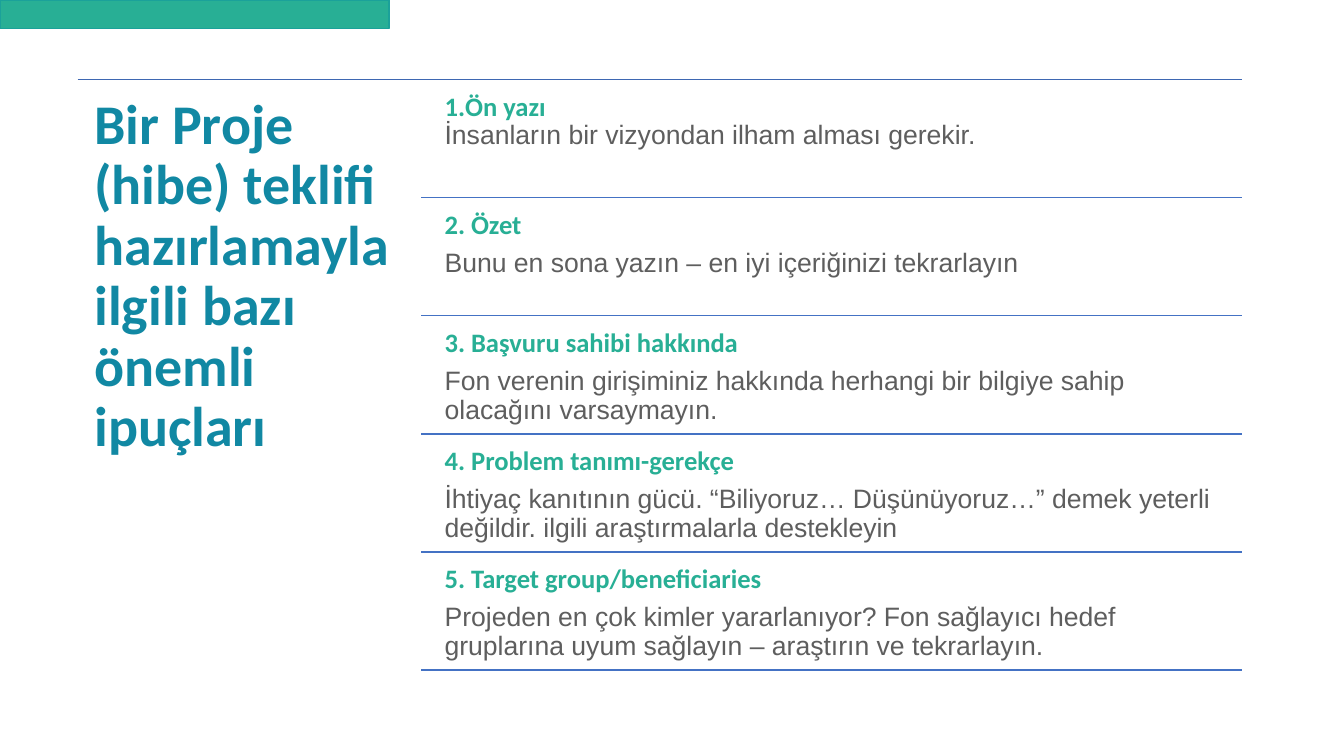
from dataclasses import dataclass

from lxml import etree
from pptx import Presentation
from pptx.dml.color import RGBColor
from pptx.enum.shapes import MSO_CONNECTOR, MSO_SHAPE
from pptx.enum.text import MSO_ANCHOR, PP_ALIGN
from pptx.oxml.ns import qn
from pptx.util import Pt

STRAIGHT = MSO_CONNECTOR.STRAIGHT
RECTANGLE = MSO_SHAPE.RECTANGLE
TOP = MSO_ANCHOR.TOP
LEFT = PP_ALIGN.LEFT

GREEN = RGBColor(0x28, 0xAF, 0x95)
GREEN_EDGE = RGBColor(0x1B, 0xA1, 0x9A)
TEAL = RGBColor(0x11, 0x88, 0xA3)
GREY = RGBColor(0x5E, 0x5E, 0x5E)
BLUE = RGBColor(0x44, 0x72, 0xC4)
DARK_BLUE = RGBColor(0x3E, 0x67, 0xB2)

# Layout in points
RIGHT_EDGE = 887
TITLE_LEFT = 55.5
TOP_RULE = 56.7
TIP_LEFT, TIP_TOP = 311.8, 60.7
TIP_WIDTH, TIP_HEIGHT = 575.2, 80.4
TIP_PITCH = 84.4
RULE_LEFT = 301


@dataclass(frozen=True)
class TextStyle:
    font: str
    size: float
    color: RGBColor
    bold: bool


@dataclass(frozen=True)
class Tip:
    heading: str
    advice: str
    auto_numbered: bool = False


TITLE_STYLE = TextStyle("Calibri", 40, TEAL, True)
HEADING_STYLE = TextStyle("Calibri", 19, GREEN, True)
ADVICE_STYLE = TextStyle("Arial", 19, GREY, False)

TITLE = "Bir Proje (hibe) teklifi hazırlamayla ilgili bazı önemli ipuçları"
TIPS = [
    Tip("Ön yazı", "İnsanların bir vizyondan ilham alması gerekir.", True),
    Tip("2. Özet", "Bunu en sona yazın – en iyi içeriğinizi tekrarlayın"),
    Tip("3. Başvuru sahibi hakkında",
        "Fon verenin girişiminiz hakkında herhangi bir bilgiye sahip "
        "olacağını varsaymayın."),
    Tip("4. Problem tanımı-gerekçe",
        "İhtiyaç kanıtının gücü. “Biliyoruz… Düşünüyoruz…” demek yeterli "
        "değildir. ilgili araştırmalarla destekleyin"),
    Tip("5. Target group/beneficiaries",
        "Projeden en çok kimler yararlanıyor? Fon sağlayıcı hedef gruplarına "
        "uyum sağlayın – araştırın ve tekrarlayın."),
]


def add_rule(slide, left: float, y: float, color: RGBColor) -> None:
    rule = slide.shapes.add_connector(
        STRAIGHT, Pt(left), Pt(y), Pt(RIGHT_EDGE), Pt(y))
    rule.line.color.rgb = color
    rule.line.width = Pt(1)
    etree.SubElement(rule._element.spPr, qn("a:effectLst"))


def add_text(slide, left: float, top: float, width: float, height: float,
             inset: float, text: str, styles: list[TextStyle]):
    """Add a text box whose runs take the given styles in order."""
    box = slide.shapes.add_textbox(Pt(left), Pt(top), Pt(width), Pt(height))
    frame = box.text_frame
    frame.word_wrap = True
    frame.vertical_anchor = TOP
    frame.margin_left = frame.margin_right = Pt(inset)
    frame.margin_top = frame.margin_bottom = Pt(inset)
    frame.text = text
    runs = [run for paragraph in frame.paragraphs for run in paragraph.runs]
    for run, style in zip(runs, styles):
        run.font.name = style.font
        run.font.size = Pt(style.size)
        run.font.color.rgb = style.color
        run.font.bold = style.bold
    for paragraph in frame.paragraphs:
        paragraph.alignment = LEFT
        paragraph.line_spacing = 0.9
        paragraph.space_after = Pt(0.35 * styles[0].size)
    return frame


def add_tip(slide, index: int, tip: Tip) -> None:
    offset = index * TIP_PITCH
    separator = "\v" if tip.auto_numbered else "\n"
    frame = add_text(slide, TIP_LEFT, TIP_TOP + offset, TIP_WIDTH, TIP_HEIGHT,
                     5.8, tip.heading + separator + tip.advice,
                     [HEADING_STYLE, ADVICE_STYLE])
    if tip.auto_numbered:
        properties = frame.paragraphs[0]._p.get_or_add_pPr()
        properties.set("marL", "0")
        properties.set("indent", "0")
        etree.SubElement(properties, qn("a:buAutoNum"), type="arabicPeriod")
    add_rule(slide, RULE_LEFT, TIP_TOP + TIP_HEIGHT + offset, BLUE)


def main() -> None:
    deck = Presentation()
    deck.slide_width, deck.slide_height = Pt(960), Pt(540)
    slide = deck.slides.add_slide(deck.slide_layouts[6])

    # Corner band
    band = slide.shapes.add_shape(RECTANGLE, Pt(0), Pt(0), Pt(278), Pt(20.2))
    band.shadow.inherit = False
    band.fill.solid()
    band.fill.fore_color.rgb = GREEN
    band.line.color.rgb = GREEN_EDGE
    band.line.width = Pt(1)

    # Title under the top rule
    add_rule(slide, TITLE_LEFT, TOP_RULE, DARK_BLUE)
    add_text(slide, TITLE_LEFT, TOP_RULE, 245.5, 427, 12, TITLE, [TITLE_STYLE])

    # Tips, each closed by a rule
    for index, tip in enumerate(TIPS):
        add_tip(slide, index, tip)

    deck.save("out.pptx")


if __name__ == "__main__":
    main()
